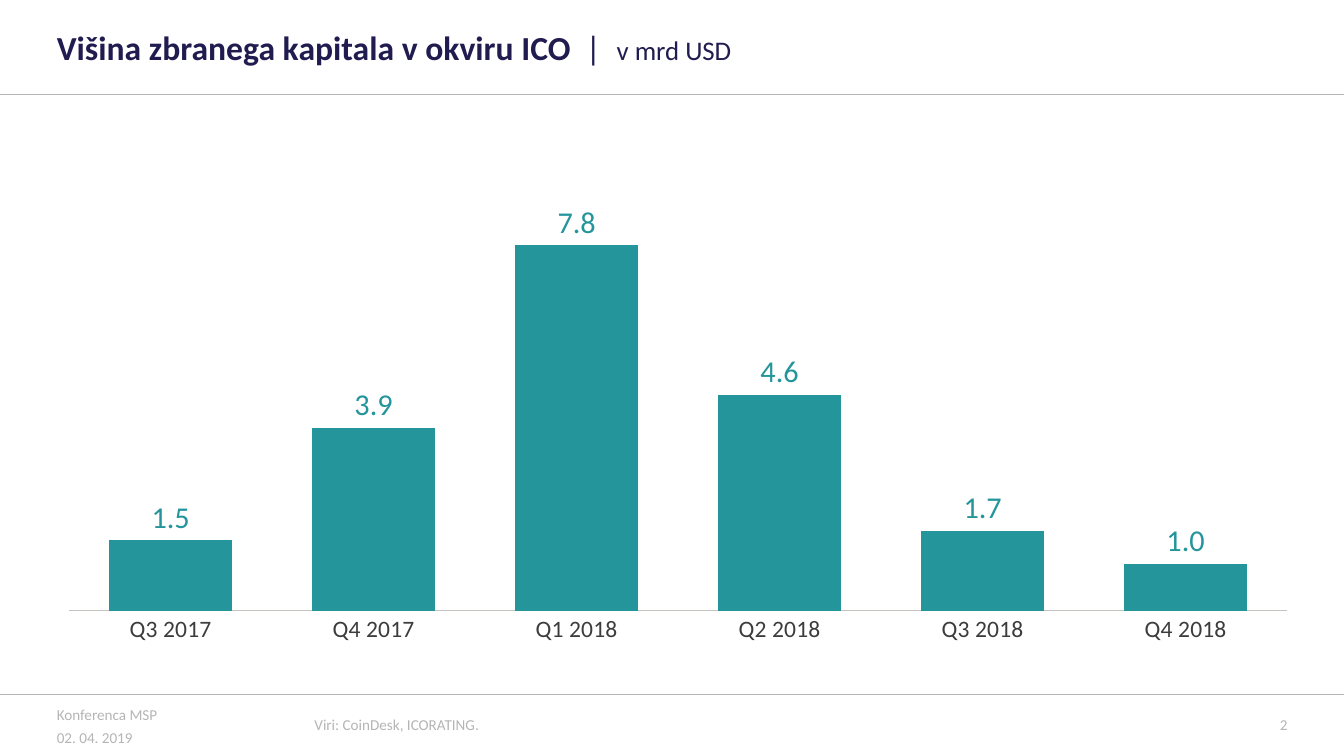
from lxml import etree
from pptx import Presentation
from pptx.chart.data import CategoryChartData
from pptx.dml.color import RGBColor
from pptx.enum import chart as charts, shapes, text
from pptx.oxml import parse_xml
from pptx.oxml.ns import nsdecls, qn
from pptx.util import Inches, Pt

WIDTH, HEIGHT = Inches(11.11), Inches(6.25)
COLORS = {"navy": "201C50", "teal": "24959B", "grey": "B5B5B5",
          "axis": "C7C3BE", "label": "3C3C3C"}
FONT = "Calibri"

# Shares of the slide, in percent
LEFT, RIGHT = 4.23, 95.8
HEADER_RULE, FOOTER_RULE = 12.48, 91.84
FOOTER_TOP, FOOTER_HEIGHT = 93.28, 5.12

CAPITAL = {"Q3 2017": 1.5, "Q4 2017": 3.9, "Q1 2018": 7.8,
           "Q2 2018": 4.6, "Q3 2018": 1.7, "Q4 2018": 1.0}


def across(percent):
    return int(WIDTH * percent / 100)


def down(percent):
    return int(HEIGHT * percent / 100)


def box(left, top, width, height):
    return across(left), down(top), across(width), down(height)


def style(font, size, color, bold=False):
    font.name, font.size, font.bold = FONT, Pt(size), bold
    font.color.rgb = RGBColor.from_string(COLORS[color])


def add_text_frame(slide, area):
    """Add a text box without margins, centred vertically."""
    frame = slide.shapes.add_textbox(*box(*area)).text_frame
    frame.word_wrap = True
    frame.vertical_anchor = text.MSO_ANCHOR.MIDDLE
    frame.margin_left = frame.margin_right = 0
    frame.margin_top = frame.margin_bottom = 0
    return frame


def add_title(slide, parts, stops):
    """Write parts of (wording, size, bold) in one line, parted by tab stops."""
    line = add_text_frame(slide, (LEFT, 2.72, 77.05, 7.04)).paragraphs[0]
    tabs = etree.SubElement(line._p.get_or_add_pPr(), qn("a:tabLst"))
    for stop in stops:
        etree.SubElement(tabs, qn("a:tab"), pos=str(across(stop)), algn="l")
    for wording, size, bold in parts:
        run = line.add_run()
        run.text = wording
        style(run.font, size, "navy", bold)


def add_footer(slide, wording, left, width, align=text.PP_ALIGN.LEFT,
               height=FOOTER_HEIGHT):
    frame = add_text_frame(slide, (left, FOOTER_TOP, width, height))
    frame.text = wording
    for paragraph in frame.paragraphs:
        paragraph.alignment = align
        paragraph.space_after = Pt(3)
        for run in paragraph.runs:
            style(run.font, 9, "grey")


def add_rule(slide, height):
    rule = slide.shapes.add_connector(
        shapes.MSO_CONNECTOR.STRAIGHT, 0, down(height), WIDTH, down(height))
    rule.line.color.rgb = RGBColor.from_string(COLORS["grey"])
    rule.line.width = Pt(0.25)
    etree.SubElement(rule._element.spPr, qn("a:effectLst"))


def set_plot_area(chart, **shares):
    """Fix the inner plot area, given as shares x, y, w, h of the chart."""
    modes = "".join(f'<c:{side}Mode val="edge"/>' for side in "xy")
    sizes = "".join(f'<c:{side} val="{share}"/>'
                    for side, share in shares.items())
    plot_area = chart._chartSpace.chart.plotArea
    for layout in plot_area.findall(qn("c:layout")):
        plot_area.remove(layout)
    plot_area.insert(0, parse_xml(
        f'<c:layout {nsdecls("c")}><c:manualLayout>'
        f'<c:layoutTarget val="inner"/>{modes}{sizes}'
        '</c:manualLayout></c:layout>'))


def add_capital_chart(slide):
    data = CategoryChartData(number_format="#,##0.0")
    data.categories = list(CAPITAL)
    data.add_series("Series 1", list(CAPITAL.values()))
    chart = slide.shapes.add_chart(
        charts.XL_CHART_TYPE.COLUMN_CLUSTERED,
        *box(LEFT, 17.28, RIGHT - LEFT, 70.56), data).chart
    style(chart.font, 10, "navy")
    chart.has_legend = chart.has_title = False
    set_plot_area(chart, x=0.01, y=0.11, w=0.99, h=0.79)

    quarters = chart.category_axis
    quarters.major_tick_mark = charts.XL_TICK_MARK.NONE
    quarters.format.line.color.rgb = RGBColor.from_string(COLORS["axis"])
    quarters.format.line.width = Pt(0.5)
    style(quarters.tick_labels.font, 14, "label")

    amounts = chart.value_axis
    amounts.minimum_scale, amounts.maximum_scale = 0, 9
    amounts.has_major_gridlines = False
    amounts.visible = False

    columns = chart.plots[0]
    columns.gap_width, columns.overlap = 66, -9
    columns.vary_by_categories = False
    capital = columns.series[0]
    capital.format.fill.solid()
    capital.format.fill.fore_color.rgb = RGBColor.from_string(COLORS["teal"])

    labels = capital.data_labels
    labels.show_value = True
    labels.number_format, labels.number_format_is_linked = "#,##0.0", False
    labels.position = charts.XL_LABEL_POSITION.OUTSIDE_END
    style(labels.font, 18, "teal")


def main():
    deck = Presentation()
    deck.slide_width, deck.slide_height = WIDTH, HEIGHT
    slide = deck.slides.add_slide(deck.slide_layouts[6])

    for height in (HEADER_RULE, FOOTER_RULE):
        add_rule(slide, height)
    add_title(slide, [("Višina zbranega kapitala v okviru ICO", 20, True),
                      ("\t|", 20, False), ("\tv mrd USD", 16, False)],
              stops=(39.35, 41.65))
    add_capital_chart(slide)
    add_footer(slide, "Konferenca MSP\n02. 04. 2019", LEFT, 12.51, height=5.44)
    add_footer(slide, "Viri: CoinDesk, ICORATING.", 23.4, 61.2)
    add_footer(slide, "2", RIGHT - 3, 3, text.PP_ALIGN.RIGHT)

    deck.save("out.pptx")


if __name__ == "__main__":
    main()
